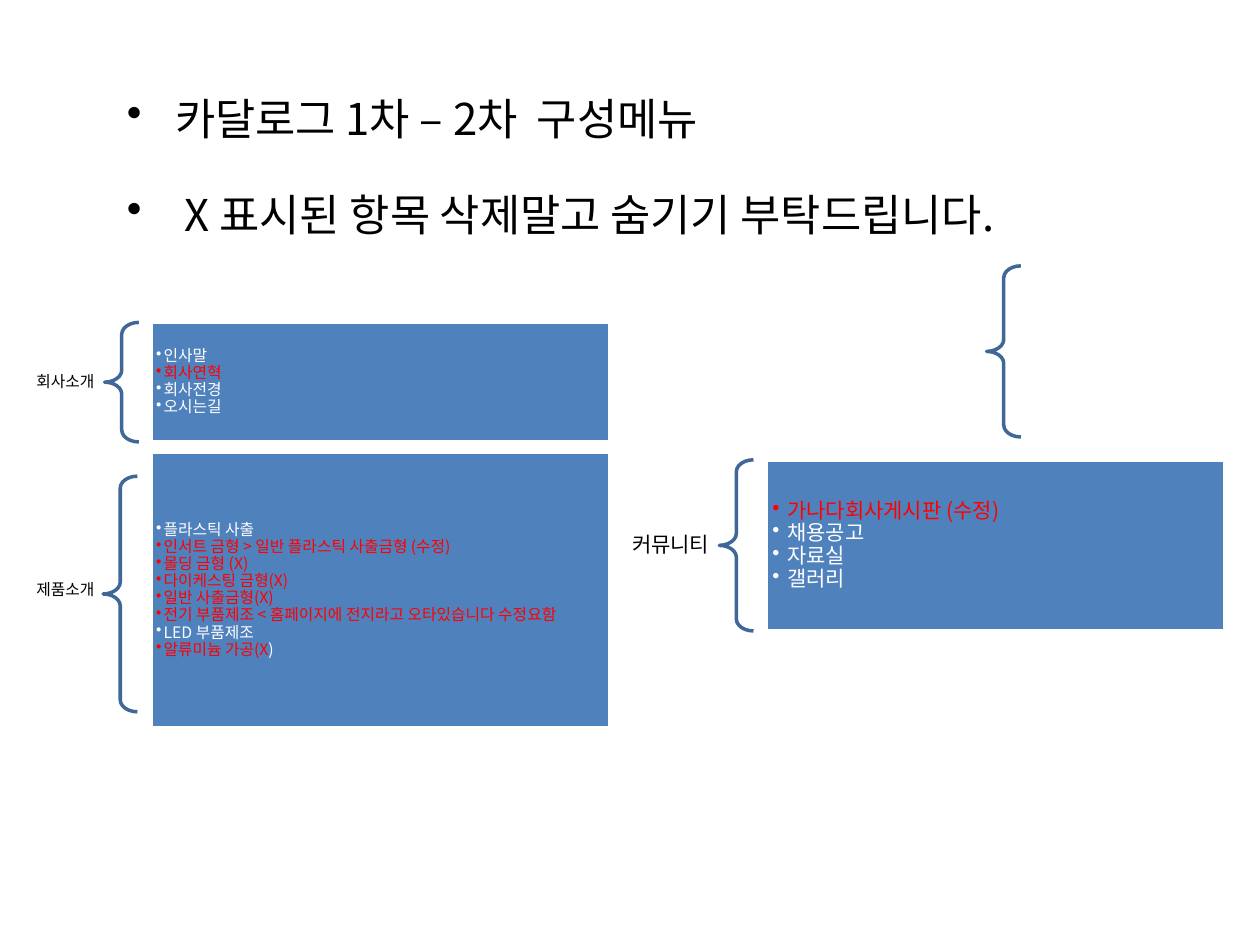
"""Build the slide listing catalogue menu sections and the items to change."""
import pptx
import pptx.util
import pptx.dml.color
import pptx.enum.shapes
import pptx.enum.text
import lxml.etree

Cm, Pt = pptx.util.Cm, pptx.util.Pt
MSO_SHAPE = pptx.enum.shapes.MSO_SHAPE
PP_ALIGN = pptx.enum.text.PP_ALIGN
MIDDLE = pptx.enum.text.MSO_ANCHOR.MIDDLE
FONT = "Noto Sans CJK KR"
BLACK, WHITE, RED = "000000", "FFFFFF", "FF0000"
BLUE, DARK_BLUE = "4F81BD", "3F6797"


def color(value):
    return pptx.dml.color.RGBColor.from_string(value)


def format_para(para, size, value=None, indent=None):
    if indent:
        properties = para._p.get_or_add_pPr()
        properties.set("marL", str(Cm(indent)))
        properties.set("indent", str(-Cm(indent)))
        namespace = properties.nsmap["a"]
        bullet = lxml.etree.SubElement(properties, f"{{{namespace}}}buChar")
        bullet.set("char", "•")
    para.font.size = Pt(size)
    para.font.name = FONT
    for tag in ("a:ea",):
        for span in para.runs:
            east = lxml.etree.SubElement(
                span._r.get_or_add_rPr(), f"{{{span._r.nsmap['a']}}}ea")
            east.set("typeface", FONT)
    if value:
        para.font.color.rgb = color(value)


deck = pptx.Presentation()
deck.slide_width, deck.slide_height = Cm(25.4), Cm(19.05)
page = deck.slides.add_slide(deck.slide_layouts[6])

sections = [
    ("회사소개", 9, 0.15, 0.1, (-1.3, 7.39, 3.4, 0.64), (3.05, 6.5, 9.25, 2.41), [
        [("인사말", WHITE)],
        [("회사연혁", RED)],
        [("회사전경", WHITE)],
        [("오시는길", WHITE)],
    ]),
    ("제품소개", 9, 0.15, 0.1, (-1.3, 11.58, 3.4, 0.64), (3.05, 9.12, 9.25, 5.56), [
        [("플라스틱 사출", WHITE)],
        [("인서트 금형 > 일반 플라스틱 사출금형 (수정)", RED)],
        [("몰딩 금형 (X)", RED)],
        [("다이케스팅 금형(X)", RED)],
        [("일반 사출금형(X)", RED)],
        [("전기 부품제조 < 홈페이지에 전지라고 오타있습니다 수정요함", RED)],
        [("LED 부품제조", WHITE)],
        [("알류미늄 가공(X", RED), (")", WHITE)],
    ]),
    ("커뮤니티", 12, 0.3, 0.13, (11.1, 9.27, 3.4, 3.45), (15.44, 9.27, 9.25, 3.45), [
        [("가나다회사게시판 (수정)", RED)],
        [("채용공고", WHITE)],
        [("자료실", WHITE)],
        [("갤러리", WHITE)],
    ]),
]

for title, size, indent, inset, label_place, panel_place, items in sections:
    label = page.shapes.add_textbox(*map(Cm, label_place))
    frame = label.text_frame
    frame.word_wrap = True
    frame.vertical_anchor = MIDDLE
    frame.margin_left = frame.margin_right = Cm(0.2)
    frame.margin_top = frame.margin_bottom = Cm(0.08)
    para = frame.paragraphs[0]
    para.text = title
    para.alignment = PP_ALIGN.RIGHT
    para.line_spacing = 0.9
    format_para(para, size, BLACK)

    panel = page.shapes.add_shape(MSO_SHAPE.RECTANGLE, *map(Cm, panel_place))
    panel.shadow.inherit = False
    panel.fill.solid()
    panel.fill.fore_color.rgb = color(BLUE)
    panel.line.color.rgb = color(WHITE)
    panel.line.width = Pt(2)
    frame = panel.text_frame
    frame.word_wrap = True
    frame.vertical_anchor = MIDDLE
    frame.margin_left = frame.margin_right = Cm(inset)
    frame.margin_top = frame.margin_bottom = Cm(inset)
    for index, item in enumerate(items):
        para = frame.add_paragraph() if index else frame.paragraphs[0]
        para.alignment = PP_ALIGN.LEFT
        para.line_spacing = 0.9
        for words, value in item:
            span = para.add_run()
            span.text = words
            span.font.color.rgb = color(value)
        format_para(para, size, indent=indent)

braces = [(2.11, 6.5, 2.41), (2.08, 9.6, 4.75), (19.89, 5.36, 3.45), (14.5, 9.27, 3.45)]
for left, top, height in braces:
    brace = page.shapes.add_shape(
        MSO_SHAPE.LEFT_BRACE, Cm(left), Cm(top), Cm(0.69), Cm(height))
    brace.adjustments[0] = 0.35
    brace.shadow.inherit = False
    brace.fill.background()
    brace.line.color.rgb = color(DARK_BLUE)
    brace.line.width = Pt(2)

heading = page.shapes.add_textbox(Cm(2.31), Cm(1.73), Cm(20.8), Cm(3.45))
heading.text_frame.word_wrap = True
lines = ["카달로그 1차 – 2차  구성메뉴", " X 표시된 항목 삭제말고 숨기기 부탁드립니다."]
for index, words in enumerate(lines):
    para = heading.text_frame.add_paragraph() if index else heading.text_frame.paragraphs[0]
    para.text = words
    if index:
        para.space_before = Pt(25)
    format_para(para, 25, BLACK, 0.97)

deck.save("out.pptx")
